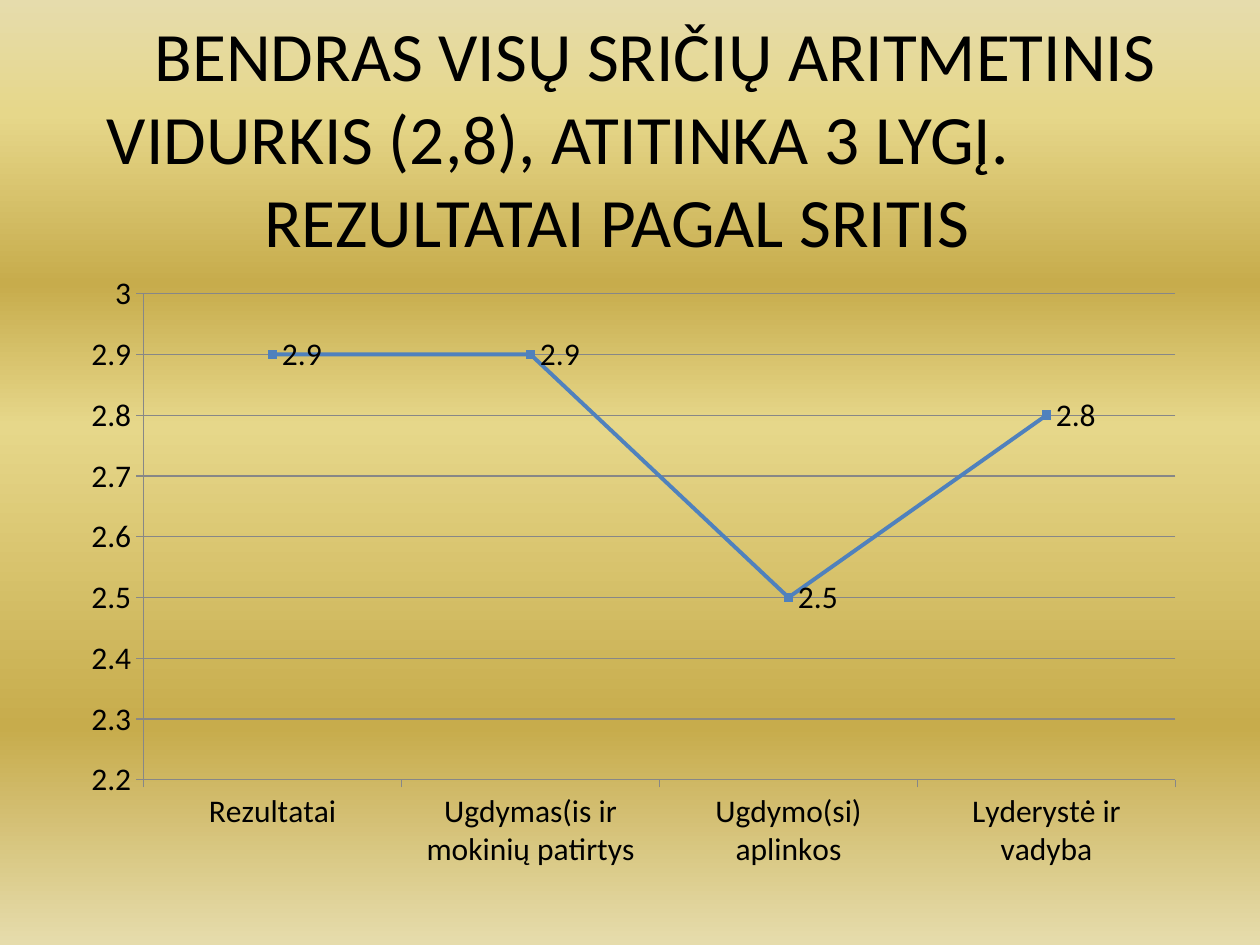
from lxml import etree
from pptx import Presentation
from pptx.chart.data import CategoryChartData
from pptx.dml.color import RGBColor
from pptx.enum.chart import XL_CHART_TYPE, XL_LABEL_POSITION, XL_MARKER_STYLE, XL_TICK_MARK
from pptx.enum.text import MSO_ANCHOR, PP_ALIGN
from pptx.oxml.ns import qn
from pptx.util import Inches, Pt

LINE_CHART = XL_CHART_TYPE.LINE_MARKERS_STACKED
LABEL_RIGHT = XL_LABEL_POSITION.RIGHT
SQUARE = XL_MARKER_STYLE.SQUARE
TICK_OUTSIDE = XL_TICK_MARK.OUTSIDE
MIDDLE = MSO_ANCHOR.MIDDLE
LEFT = PP_ALIGN.LEFT

FONT = "Calibri"
COLORS = {"text": "000000", "series": "4F81BD", "grid": "878787"}
BACKGROUND_STOPS = [
    (0, "E6DCAC"), (12, "E6D78A"), (30, "C7AC4C"),
    (45, "E6D78A"), (77, "C7AC4C"), (100, "E6DCAC"),
]
TITLE_PARAGRAPHS = [
    ("BENDRAS VISŲ SRIČIŲ ARITMETINIS VIDURKIS (2,8), ATITINKA 3 LYGĮ.", 0.38),
    ("REZULTATAI PAGAL SRITIS", 1.25),
]
RESULTS = {
    "Rezultatai": 2.9,
    "Ugdymas(is ir mokinių patirtys": 2.9,
    "Ugdymo(si) aplinkos": 2.5,
    "Lyderystė ir vadyba": 2.8,
}
SLIDE_SIZE = (10, 7.5)
TITLE_BOX = (0.75, 0.76, 8.84, 1.25)
CHART_BOX = (0.51, 2.18, 9, 4.95)
PLOT_LAYOUT = {"x": 0.07, "y": 0.03, "w": 0.91, "h": 0.78}


def color(name):
    return RGBColor.from_string(COLORS[name])


def set_background(slide):
    fill = slide.background.fill
    fill.gradient()
    fill.gradient_angle = 270
    stops = slide.element.find(".//" + qn("a:gsLst"))
    for stop in list(stops):
        stops.remove(stop)
    for position, value in BACKGROUND_STOPS:
        stop = etree.SubElement(stops, qn("a:gs"), pos=str(position * 1000))
        etree.SubElement(stop, qn("a:srgbClr"), val=value)


def add_title(slide):
    frame = slide.shapes.add_textbox(*map(Inches, TITLE_BOX)).text_frame
    frame.word_wrap = True
    frame.vertical_anchor = MIDDLE
    frame.margin_bottom = Inches(0.65)
    for index, (text, indent) in enumerate(TITLE_PARAGRAPHS):
        paragraph = frame.add_paragraph() if index else frame.paragraphs[0]
        paragraph.text = text
        paragraph.alignment = LEFT
        paragraph.font.name = FONT
        paragraph.font.size = Pt(39.6)
        paragraph.font.color.rgb = color("text")
        paragraph._p.get_or_add_pPr().set("indent", str(Inches(indent)))


def set_plot_layout(chart):
    plot_area = chart._chartSpace.find(".//" + qn("c:plotArea"))
    layout = plot_area.find(qn("c:layout"))
    if layout is None:
        layout = etree.Element(qn("c:layout"))
        plot_area.insert(0, layout)
    manual = etree.SubElement(layout, qn("c:manualLayout"))
    etree.SubElement(manual, qn("c:layoutTarget"), val="inner")
    for side in "xy":
        etree.SubElement(manual, qn(f"c:{side}Mode"), val="edge")
    for key, share in PLOT_LAYOUT.items():
        etree.SubElement(manual, qn(f"c:{key}"), val=str(share))


def add_results_chart(slide):
    data = CategoryChartData()
    data.categories = list(RESULTS)
    data.add_series("Series 1", list(RESULTS.values()))
    chart = slide.shapes.add_chart(LINE_CHART, *map(Inches, CHART_BOX), data).chart
    chart.has_legend = False
    chart.has_title = False
    chart.font.name = FONT
    chart.font.size = Pt(18)
    chart.font.color.rgb = color("text")
    set_plot_layout(chart)

    value_axis = chart.value_axis
    value_axis.minimum_scale = 2.2
    value_axis.maximum_scale = 3
    value_axis.major_unit = 0.1
    value_axis.has_major_gridlines = True
    for axis in (chart.category_axis, value_axis):
        axis.major_tick_mark = TICK_OUTSIDE
        axis.format.line.color.rgb = color("grid")
    value_axis.major_gridlines.format.line.color.rgb = color("grid")

    plot = chart.plots[0]
    plot.vary_by_categories = False
    plot.has_data_labels = True
    plot.data_labels.show_value = True
    plot.data_labels.position = LABEL_RIGHT

    series = plot.series[0]
    series.smooth = False
    series.format.line.color.rgb = color("series")
    series.format.line.width = Pt(2.25)
    marker = series.marker
    marker.style = SQUARE
    marker.size = 5
    marker.format.fill.solid()
    marker.format.fill.fore_color.rgb = color("series")
    marker.format.line.color.rgb = color("series")


def main():
    presentation = Presentation()
    presentation.slide_width, presentation.slide_height = map(Inches, SLIDE_SIZE)
    slide = presentation.slides.add_slide(presentation.slide_layouts[6])
    set_background(slide)
    add_title(slide)
    add_results_chart(slide)
    presentation.save("out.pptx")


if __name__ == "__main__":
    main()
